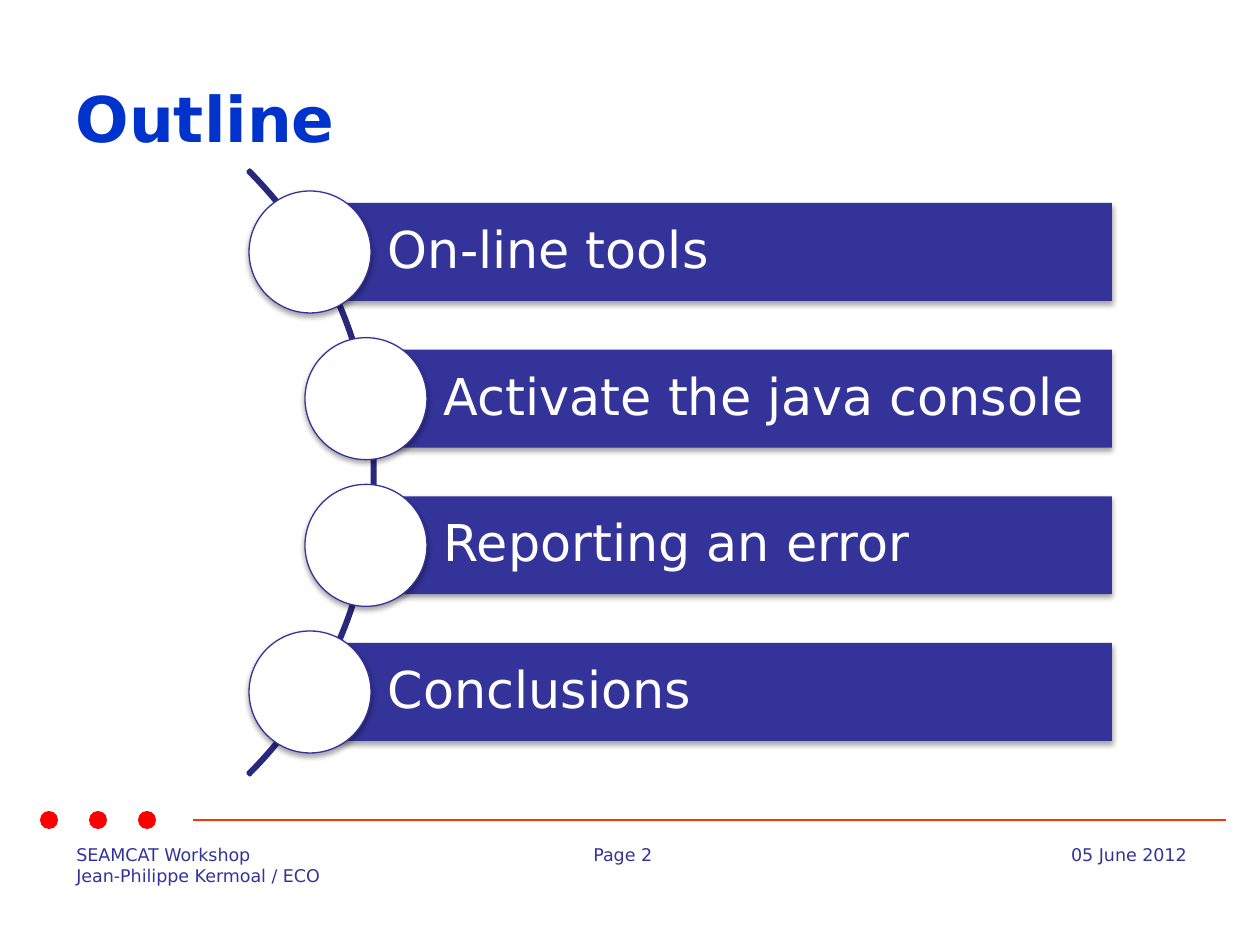
import pptx
import pptx.util
import pptx.dml.color
import pptx.enum.shapes
import pptx.enum.text
import pptx.oxml
import pptx.oxml.ns
from dataclasses import dataclass

EMU_PER_PX = 914400 / 126
SHAPES = pptx.enum.shapes.MSO_SHAPE
ALIGN = pptx.enum.text.PP_ALIGN
ANCHOR = pptx.enum.text.MSO_ANCHOR


@dataclass(frozen=True)
class Theme:
    font: str = "DejaVu Sans"
    title: str = "0033CC"
    main: str = "333399"
    arc: str = "29297B"
    rule: str = "FF3300"
    dot: str = "FF0000"
    white: str = "FFFFFF"
    title_size: int = 36
    item_size: int = 29
    footer_size: int = 10


THEME = Theme()


def px(length):
    return pptx.util.Emu(round(length * EMU_PER_PX))


def color(value):
    return pptx.dml.color.RGBColor.from_string(value)


def write_text(text_frame, text, size, text_color, align=ALIGN.LEFT, bold=False):
    text_frame.text = text
    text_frame.word_wrap = True
    for paragraph in text_frame.paragraphs:
        paragraph.alignment = align
        for run in paragraph.runs:
            run.font.name = THEME.font
            run.font.size = pptx.util.Pt(size)
            run.font.bold = bold
            run.font.color.rgb = color(text_color)


def add_shape(slide, kind, box, fill=None, line=None, width=0.75):
    shape = slide.shapes.add_shape(kind, *map(px, box))
    if fill:
        shape.fill.solid()
        shape.fill.fore_color.rgb = color(fill)
    else:
        shape.fill.background()
    if line:
        shape.line.color.rgb = color(line)
        shape.line.width = pptx.util.Pt(width)
    else:
        shape.line.fill.background()
    shape.shadow.inherit = False
    return shape


def add_drop_shadow(shape):
    effects = shape.element.spPr.find(pptx.oxml.ns.qn("a:effectLst"))
    effects.append(pptx.oxml.parse_xml(
        f'<a:outerShdw {pptx.oxml.ns.nsdecls("a")} blurRad="40000" dist="23000" '
        'dir="5400000" rotWithShape="0"><a:srgbClr val="000000">'
        '<a:alpha val="35000"/></a:srgbClr></a:outerShdw>'))


def add_title(slide, text):
    title = slide.shapes.title
    title.left, title.top, title.width, title.height = map(px, (63, 38, 1134, 158))
    title.text_frame.vertical_anchor = ANCHOR.MIDDLE
    write_text(title.text_frame, text, THEME.title_size, THEME.title, bold=True)


def add_footer_text(slide, text, box, align=ALIGN.LEFT):
    text_box = slide.shapes.add_textbox(*map(px, box))
    write_text(text_box.text_frame, text, THEME.footer_size, THEME.main, align)


def add_footer(slide):
    # Rule with three dots
    rule = slide.shapes.add_connector(
        pptx.enum.shapes.MSO_CONNECTOR.STRAIGHT, *map(px, (193, 820, 1226, 820)))
    rule.line.color.rgb = color(THEME.rule)
    rule.line.width = pptx.util.Pt(0.75)
    rule.element.spPr.append(pptx.oxml.parse_xml(
        f'<a:effectLst {pptx.oxml.ns.nsdecls("a")}/>'))
    for index in range(3):
        add_shape(slide, SHAPES.OVAL, (40 + 49 * index, 811, 18, 18), THEME.dot)

    # Event, page and date
    add_footer_text(slide, "SEAMCAT Workshop\nJean-Philippe Kermoal / ECO", (64, 838, 278, 54))
    add_footer_text(slide, "Page 2", (581, 838, 103, 34))
    add_footer_text(slide, "05 June 2012", (994, 838, 205, 34), ALIGN.RIGHT)


def add_item(slide, text, center_x, center_y):
    bar_height, bar_right, diameter = 98, 1112, 122
    bar = add_shape(
        slide, SHAPES.RECTANGLE,
        (center_x, center_y - bar_height / 2, bar_right - center_x, bar_height), THEME.main)
    add_drop_shadow(bar)
    text_frame = bar.text_frame
    text_frame.margin_left = px(78)
    text_frame.margin_top = text_frame.margin_right = text_frame.margin_bottom = px(10)
    text_frame.vertical_anchor = ANCHOR.MIDDLE
    write_text(text_frame, text, THEME.item_size, THEME.white)
    text_frame.paragraphs[0].line_spacing = 0.9

    circle = add_shape(
        slide, SHAPES.OVAL,
        (center_x - diameter / 2, center_y - diameter / 2, diameter, diameter),
        THEME.white, THEME.main)
    add_drop_shadow(circle)


def add_outline(slide, items):
    # Arc behind the items: start angle, end angle, thickness
    arc = add_shape(slide, SHAPES.BLOCK_ARC, (-480, 45, 855, 855), line=THEME.arc, width=2)
    for index, value in enumerate((189, 27, 0.003)):
        arc.adjustments[index] = value

    # Evenly spaced rows; the inner ones sit further out on the arc
    first_y, last_y = 252, 692
    last_row = len(items) - 1
    for row, text in enumerate(items):
        center_x = 310 if row in (0, last_row) else 366
        add_item(slide, text, center_x, first_y + (last_y - first_y) * row / last_row)


def main():
    presentation = pptx.Presentation()
    presentation.slide_width = px(1260)
    presentation.slide_height = px(945)
    slide = presentation.slides.add_slide(presentation.slide_layouts[5])
    add_footer(slide)
    add_title(slide, "Outline")
    add_outline(slide, ["On-line tools", "Activate the java console",
                        "Reporting an error", "Conclusions"])
    presentation.save("out.pptx")


if __name__ == "__main__":
    main()
